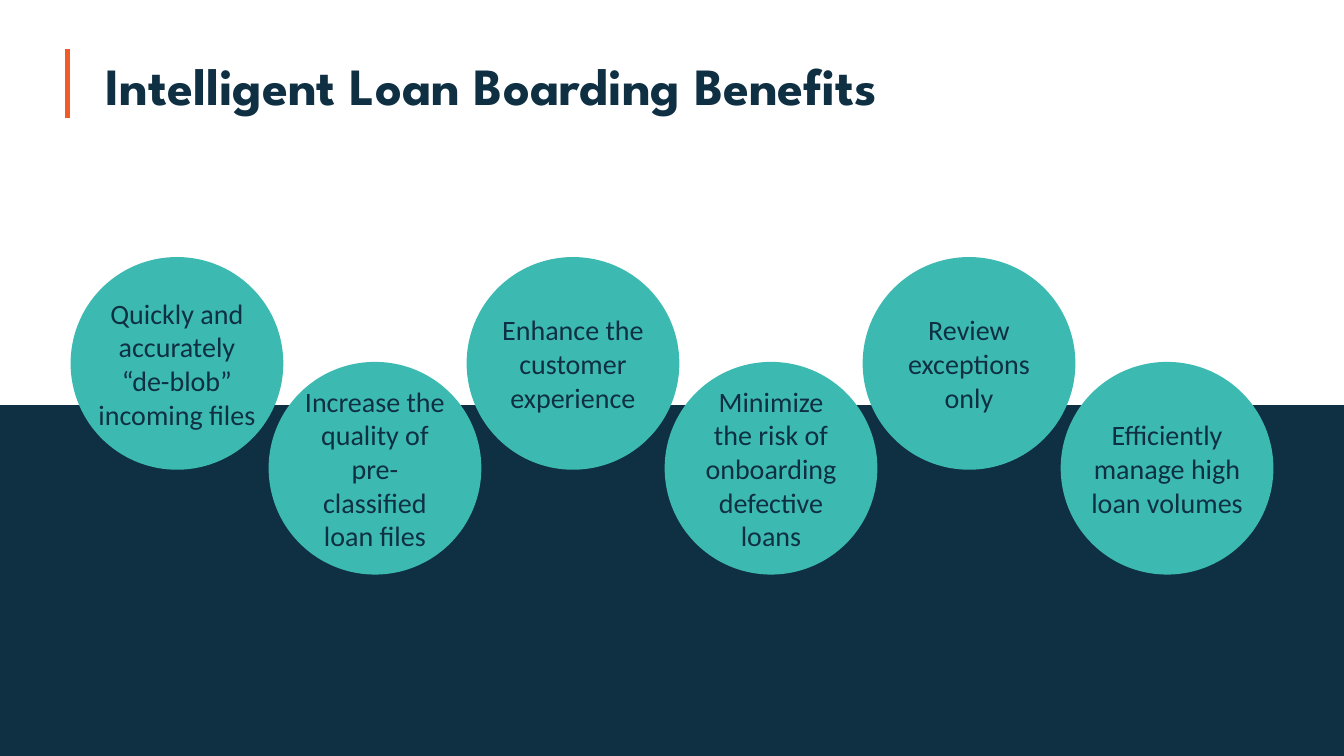
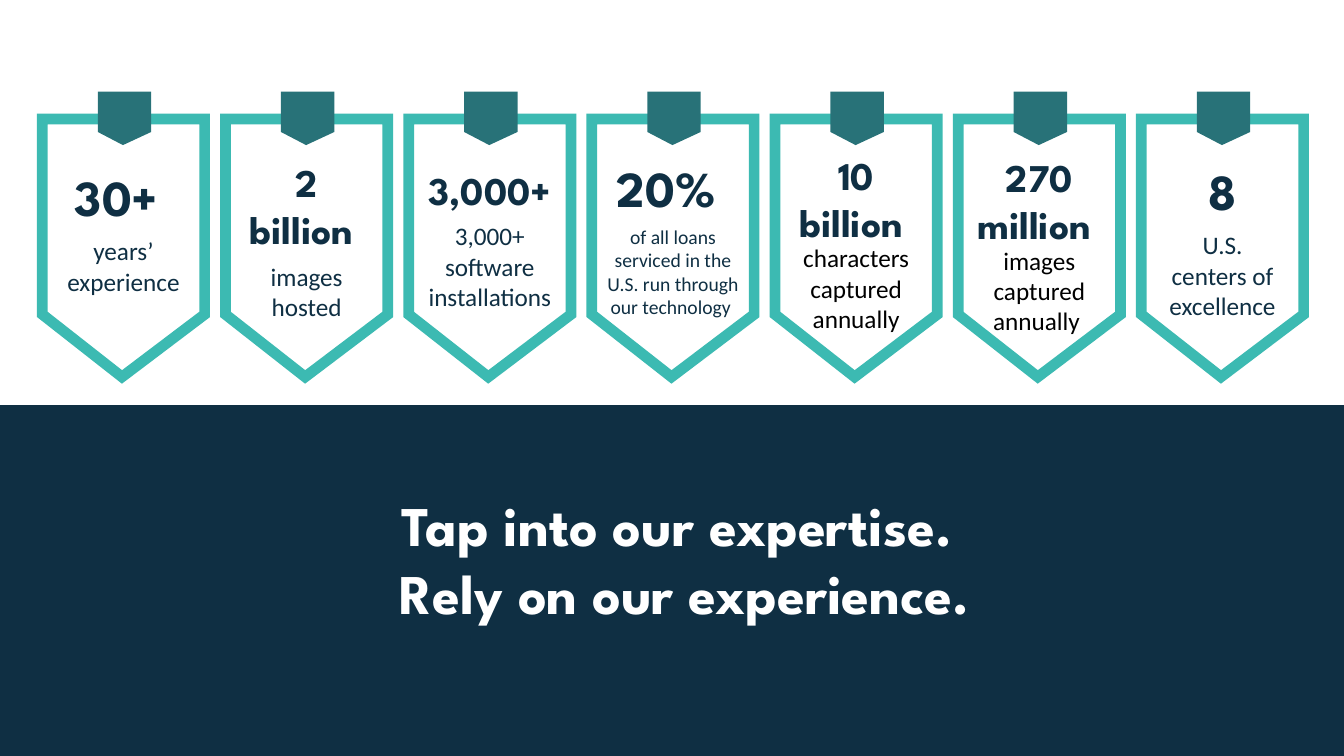
from collections import namedtuple

import pptx
import pptx.dml.color
import pptx.enum.shapes
import pptx.enum.text
import pptx.oxml.ns
import pptx.util
from lxml import etree

Inches = pptx.util.Inches
Pt = pptx.util.Pt
RGBColor = pptx.dml.color.RGBColor
Align = pptx.enum.text.PP_ALIGN
Anchor = pptx.enum.text.MSO_ANCHOR
Shape = pptx.enum.shapes.MSO_SHAPE
Connector = pptx.enum.shapes.MSO_CONNECTOR

# Style
NAVY = RGBColor(0x0F, 0x2F, 0x43)
TEAL = RGBColor(0x3C, 0xBA, 0xB2)
DARK_TEAL = RGBColor(0x28, 0x72, 0x78)
ORANGE = RGBColor(0xF1, 0x5B, 0x28)
WHITE = RGBColor(0xFF, 0xFF, 0xFF)
BLACK = RGBColor(0x00, 0x00, 0x00)
HEADING_FONT = "League Spartan"
BODY_FONT = "Calibri"
WIDTH, HEIGHT, BAND_TOP = 13.33, 7.5, 4.02

# Benefit circles
BENEFITS = [  # label, label width
    ("Quickly and accurately “de-blob” incoming files", 1.85),
    ("Increase the quality of pre-classified loan files", 1.67),
    ("Enhance the customer experience", 1.67),
    ("Minimize the risk of onboarding defective loans", 1.64),
    ("Review exceptions only", 1.83),
    ("Efficiently manage high loan volumes", 1.91),
]
CIRCLE_SIZE = 2.11
CIRCLE_LEFT, CIRCLE_PITCH = 0.7, (10.52 - 0.7) / 5
CIRCLE_TOPS = (2.55, 3.59)

# Figure badges
Badge = namedtuple("Badge", "figure size figure_top caption caption_size caption_top caption_width color")
BADGES = [
    Badge("30+ ", 36, 1.6, "years’ experience", 18, 2.29, 1.52, NAVY),
    Badge("2 billion ", 28, 1.52, "images hosted", 18, 2.54, 1.53, NAVY),
    Badge("3,000+ ", 28, 1.6, "3,000+ software installations", 18, 2.14, 1.61, NAVY),
    Badge("20% ", 36, 1.51, "of all loans serviced in the U.S. run through our technology ",
          14, 2.18, 1.61, NAVY),
    Badge("10 billion ", 28, 1.45, "characters captured annually", 18, 2.36, 1.53, BLACK),
    Badge("270 million ", 28, 1.47, "images captured annually ", 18, 2.38, 1.53, BLACK),
    Badge("8", 36, 1.54, "U.S. centers of excellence", 18, 2.23, 1.35, NAVY),
]
BADGE_LEFT, BADGE_TOP, BADGE_WIDTH = 0.42, 1.18, 1.61
BADGE_PITCH = (11.32 - 0.42) / 6
BADGE_OUTLINE = [(0, 0), (1.61, 0), (1.61, 1.94), (0.79, 2.56), (0, 1.94)]
TAB_OFFSET, TAB_TOP = 0.55, 0.91
TAB_OUTLINE = [(0, 0), (0.53, 0), (0.53, 0.4), (0.25, 0.53), (0, 0.4)]
FIGURE_WIDTH = 1.49


class Deck:
    def __init__(self):
        self.presentation = pptx.Presentation()
        self.presentation.slide_width = Inches(WIDTH)
        self.presentation.slide_height = Inches(HEIGHT)
        self.slide = None

    def new_slide(self):
        """Start a slide with the navy band across its lower part."""
        layout = self.presentation.slide_layouts[6]
        self.slide = self.presentation.slides.add_slide(layout)
        self.shape(Shape.RECTANGLE, 0, BAND_TOP, WIDTH, HEIGHT - BAND_TOP, NAVY)

    def shape(self, kind, left, top, width, height, fill):
        shape = self.slide.shapes.add_shape(
            kind, Inches(left), Inches(top), Inches(width), Inches(height))
        shape.shadow.inherit = False
        shape.fill.solid()
        shape.fill.fore_color.rgb = fill
        shape.line.fill.background()

    def outline(self, left, top, points, fill=None, line=None, line_width=7.65):
        corners = [(Inches(left + x), Inches(top + y)) for x, y in points]
        builder = self.slide.shapes.build_freeform(*corners[0])
        builder.add_line_segments(corners[1:], close=True)
        shape = builder.convert_to_shape()
        shape.shadow.inherit = False
        if fill is None:
            shape.fill.background()
        else:
            shape.fill.solid()
            shape.fill.fore_color.rgb = fill
        if line is None:
            shape.line.fill.background()
        else:
            shape.line.color.rgb = line
            shape.line.width = Pt(line_width)
            miter = etree.SubElement(shape.line._get_or_add_ln(), pptx.oxml.ns.qn("a:miter"))
            miter.set("lim", "800000")

    def line(self, start, end, color, width):
        ends = [Inches(value) for value in (*start, *end)]
        connector = self.slide.shapes.add_connector(Connector.STRAIGHT, *ends)
        connector.line.color.rgb = color
        connector.line.width = Pt(width)
        etree.SubElement(connector._element.spPr, pptx.oxml.ns.qn("a:effectLst"))

    def text(self, left, top, width, height, lines, size, color=NAVY, font=BODY_FONT,
             bold=False, align=Align.CENTER, anchor=Anchor.TOP, inset=None):
        box = self.slide.shapes.add_textbox(
            Inches(left), Inches(top), Inches(width), Inches(height))
        frame = box.text_frame
        frame.word_wrap = True
        frame.vertical_anchor = anchor
        if inset is not None:
            frame.margin_left = frame.margin_right = Inches(inset)
            frame.margin_top = frame.margin_bottom = Inches(inset)
        for index, line in enumerate(lines):
            paragraph = frame.add_paragraph() if index else frame.paragraphs[0]
            paragraph.alignment = align
            run = paragraph.add_run()
            run.text = line
            run.font.name = font
            run.font.size = Pt(size)
            run.font.bold = bold
            run.font.color.rgb = color

    def heading(self, left, top, width, height, lines, size, **options):
        self.text(left, top, width, height, lines, size,
                  font=HEADING_FONT, bold=True, **options)

    def title(self, text):
        self.heading(0.92, 0.42, 11.51, 0.84, [text], 37.3,
                     align=Align.LEFT, anchor=Anchor.MIDDLE, inset=0.13)
        self.line((0.67, 1.17), (0.67, 0.49), ORANGE, 3)

    def circle(self, left, top, label, label_width):
        self.shape(Shape.OVAL, left, top, CIRCLE_SIZE, CIRCLE_SIZE, TEAL)
        self.text(left + (CIRCLE_SIZE - label_width) / 2, top, label_width, CIRCLE_SIZE,
                  [label], 20, anchor=Anchor.MIDDLE)

    def badge(self, left, badge):
        self.outline(left, BADGE_TOP, BADGE_OUTLINE, line=TEAL)
        self.outline(left + TAB_OFFSET, TAB_TOP, TAB_OUTLINE, fill=DARK_TEAL)
        center = left + BADGE_WIDTH / 2
        self.text(center - badge.caption_width / 2, badge.caption_top, badge.caption_width, 1,
                  [badge.caption], badge.caption_size, color=badge.color)
        self.heading(center - FIGURE_WIDTH / 2, badge.figure_top, FIGURE_WIDTH, 0.7,
                     [badge.figure], badge.size)


def main():
    deck = Deck()

    # Benefits
    deck.new_slide()
    for index, (label, label_width) in enumerate(BENEFITS):
        deck.circle(CIRCLE_LEFT + index * CIRCLE_PITCH, CIRCLE_TOPS[index % 2],
                    label, label_width)
    deck.title("Intelligent Loan Boarding Benefits")

    # Experience in figures
    deck.new_slide()
    deck.heading(2.64, 4.82, 8.3, 1.45,
                 ["Tap into our expertise. ", "Rely on our experience."], 40, color=WHITE)
    for index, badge in enumerate(BADGES):
        deck.badge(BADGE_LEFT + index * BADGE_PITCH, badge)

    deck.presentation.save("out.pptx")


if __name__ == "__main__":
    main()
